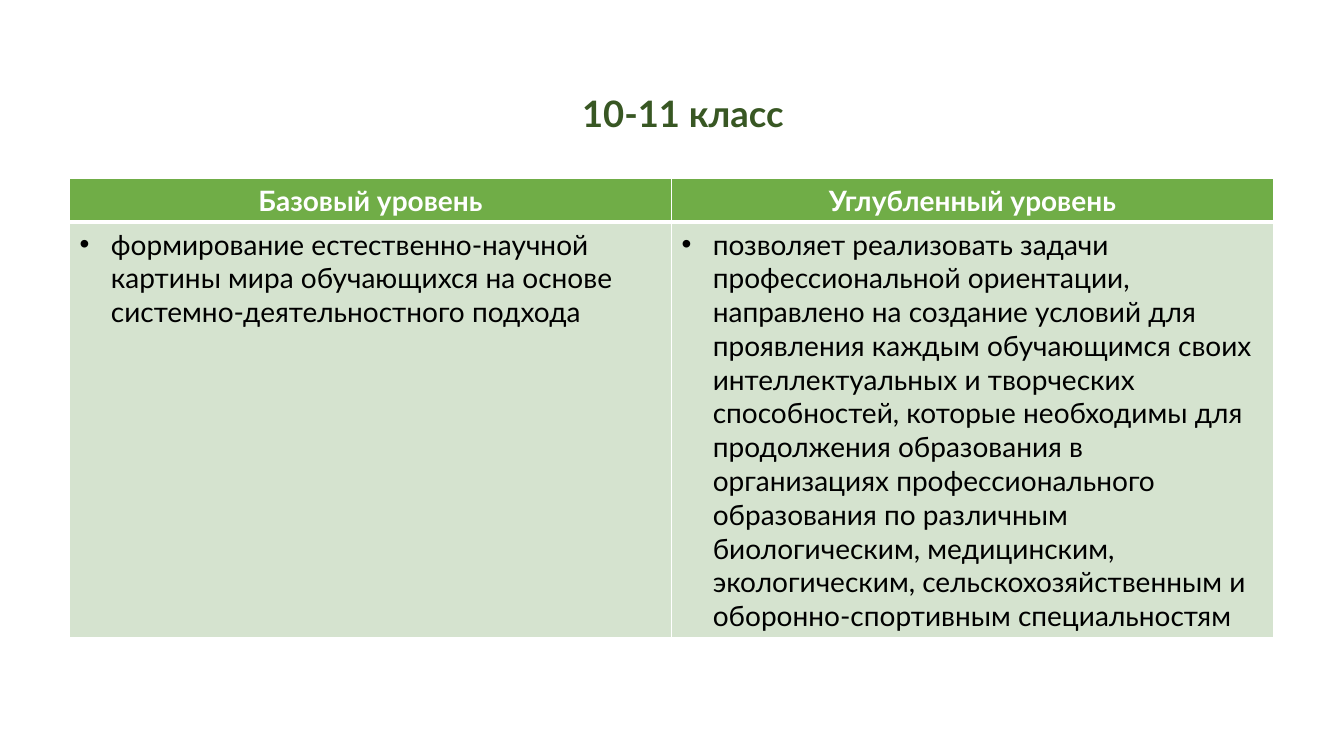
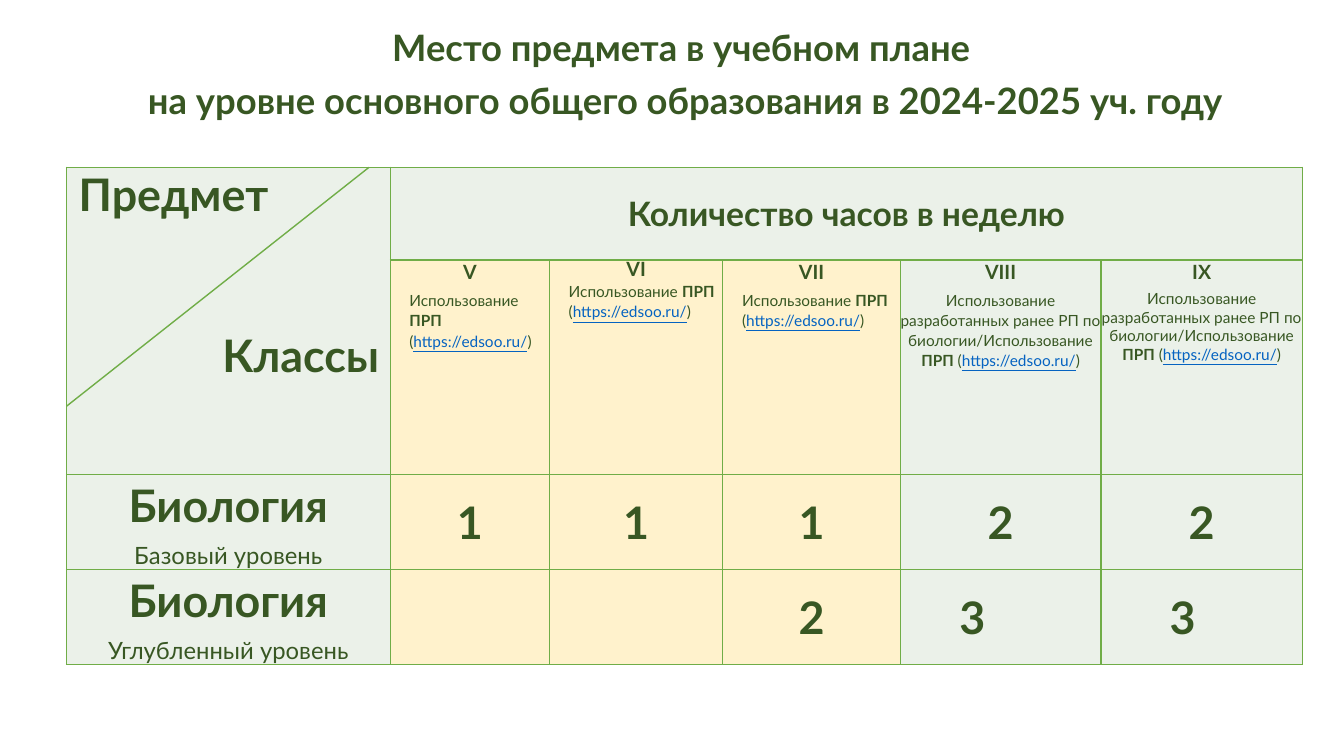
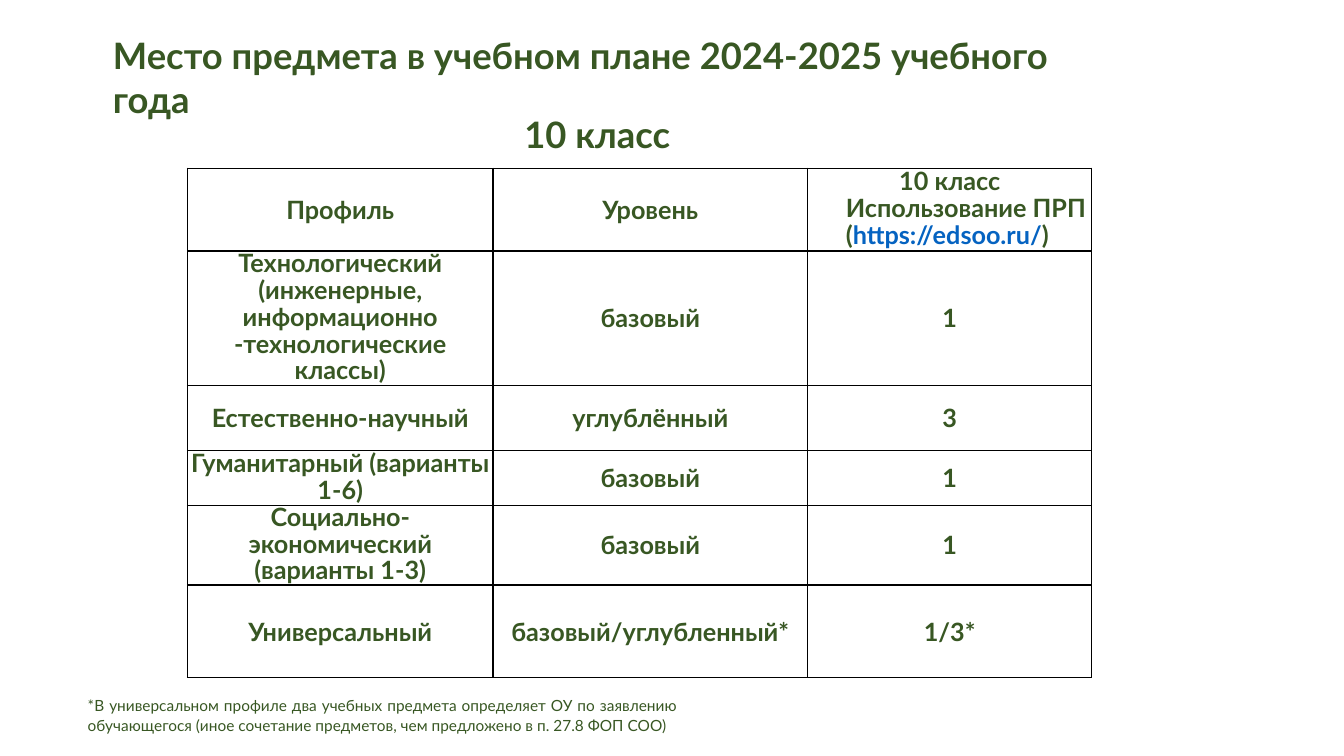
from dataclasses import dataclass, field
from typing import Any, Callable

from lxml import etree
from pptx import Presentation
from pptx.dml.color import RGBColor
from pptx.enum import shapes, text
from pptx.oxml.ns import qn
from pptx.util import Inches, Pt

FONT = "Lato"
DARK, GREEN, LINK = "385723", "70AD47", "0563C1"
PALE, MINT, CREAM = "EBF1E9", "D5E3CF", "FFF2CC"
WHITE, BLACK = "FFFFFF", "000000"
LEFT, CENTER, RIGHT, JUSTIFY = (
    text.PP_ALIGN.LEFT, text.PP_ALIGN.CENTER, text.PP_ALIGN.RIGHT, text.PP_ALIGN.JUSTIFY)
TOP, MIDDLE, BOTTOM = (
    text.MSO_ANCHOR.TOP, text.MSO_ANCHOR.MIDDLE, text.MSO_ANCHOR.BOTTOM)
SIDES = ("L", "R", "T", "B")
Box = tuple[float, float, float, float]


@dataclass
class Run:
    text: str
    size: float
    bold: bool = True
    color: str = DARK
    underline: bool = False


@dataclass
class Para:
    runs: list[Run]
    align: Any = CENTER
    fmt: dict[str, Any] = field(default_factory=dict)
    indent: float = 0
    bullet: bool = False


@dataclass
class Cell:
    paras: list[Para] = field(default_factory=list)
    anchor: Any = MIDDLE
    inset: float = 0
    right: float = 0


@dataclass
class Grid:
    box: Box
    cols: list[float]
    rows: list[float]
    cells: list[list[Cell]]
    fill: Callable[[int, int], str]
    border: str
    width: Callable[[int, str], float] = lambda row, side: 1


def rgb(color: str) -> RGBColor:
    return RGBColor.from_string(color)


def apply(obj: Any, fmt: dict[str, Any]) -> None:
    for name, value in fmt.items():
        setattr(obj, name, value)


def line(value: str, size: float, **fmt: Any) -> Para:
    return Para([Run(value, size)], fmt=fmt)


def write(tf: Any, paras: list[Para]) -> None:
    for i, para in enumerate(paras):
        p = tf.paragraphs[0] if i == 0 else tf.add_paragraph()
        apply(p, {"alignment": para.align, **para.fmt})
        pPr = p._p.get_or_add_pPr()
        pPr.set("marL", str(Inches(para.indent)))
        pPr.set("indent", str(-Inches(para.indent) if para.bullet else 0))
        if para.bullet:
            etree.SubElement(pPr, qn("a:buFont")).set("typeface", "Arial")
            etree.SubElement(pPr, qn("a:buChar")).set("char", "•")
        for run in para.runs:
            r = p.add_run()
            r.text = run.text
            apply(r.font, {"name": FONT, "size": Pt(run.size), "bold": run.bold,
                           "underline": run.underline})
            r.font.color.rgb = rgb(run.color)


def place_text(sp: Any, box: Box, paras: list[Para], wrap: bool = True) -> None:
    apply(sp, dict(zip(("left", "top", "width", "height"), map(Inches, box))))
    tf = sp.text_frame
    apply(tf, {"margin_left": 0, "margin_top": 0, "margin_right": 0, "margin_bottom": 0,
               "vertical_anchor": TOP, "word_wrap": wrap,
               "auto_size": text.MSO_AUTO_SIZE.NONE})
    write(tf, paras)


def titled_slide(prs: Any, box: Box, lines: list[str], align: Any = CENTER,
                 wrap: bool = True) -> Any:
    s = prs.slides.add_slide(prs.slide_layouts[5])
    paras = [Para([Run(value, 26)], align, {"space_after": Pt(6.3), "space_before": Pt(0)})
             for value in lines]
    place_text(s.shapes.title, box, paras, wrap)
    return s


def add_borders(cell: Any, color: str, widths: list[float]) -> None:
    tcPr = cell._tc.get_or_add_tcPr()
    for side, width in zip(SIDES, widths):
        ln = etree.SubElement(tcPr, qn(f"a:ln{side}"), w=str(Pt(width)))
        fill = etree.SubElement(ln, qn("a:solidFill"))
        etree.SubElement(fill, qn("a:srgbClr"), val=color)


def add_grid(s: Any, grid: Grid) -> Any:
    table = s.shapes.add_table(len(grid.rows), len(grid.cols), *map(Inches, grid.box)).table
    apply(table, {"first_row": False, "horz_banding": False})
    for col, width in zip(table.columns, grid.cols):
        col.width = Inches(width)
    for i, (row, height) in enumerate(zip(table.rows, grid.rows)):
        row.height = Inches(height)
        for j, cell in enumerate(row.cells):
            add_borders(cell, grid.border, [grid.width(i, side) for side in SIDES])
            cell.fill.solid()
            cell.fill.fore_color.rgb = rgb(grid.fill(i, j))
            content = grid.cells[i][j] if j < len(grid.cells[i]) else Cell()
            apply(cell, {"margin_left": Inches(content.inset),
                         "margin_right": Inches(content.inset + content.right),
                         "margin_top": Inches(content.inset / 2),
                         "margin_bottom": Inches(content.inset / 2),
                         "vertical_anchor": content.anchor})
            write(cell.text_frame, content.paras)
    return table


def link_runs(size: float, bold: bool) -> list[Run]:
    return [Run("(", size, bold), Run("https://edsoo.ru/", size, bold, LINK, True),
            Run(")", size, bold)]


def levels_slide(prs: Any) -> None:
    s = titled_slide(prs, (1.11, 0.9, 11.33, 0.6), ["10-11 класс"])
    heads = ["Базовый уровень", "Углубленный уровень"]
    bodies = [
        "формирование естественно-научной картины мира обучающихся на основе "
        "системно-деятельностного подхода",
        "позволяет реализовать задачи профессиональной ориентации, направлено на создание "
        "условий для проявления каждым обучающимся своих интеллектуальных и творческих "
        "способностей, которые необходимы для продолжения образования в организациях "
        "профессионального образования по различным биологическим, медицинским, "
        "экологическим, сельскохозяйственным и оборонно-спортивным специальностям"]
    cells = [
        [Cell([Para([Run(h, 20, True, WHITE)])], TOP, 0.1) for h in heads],
        [Cell([Para([Run(b, 20, False, BLACK)], LEFT, indent=0.31, bullet=True)], TOP, 0.1)
         for b in bodies]]
    add_grid(s, Grid(
        (0.69, 1.77, 11.95, 4.53), [5.97] * 2, [0.41, 4.12], cells,
        lambda i, j: MINT if i else GREEN, WHITE,
        lambda i, side: 3 if (i, side) in ((0, "B"), (1, "T")) else 1))


def class_cell(name: str, pitch: float, reused: bool) -> Cell:
    head = {"line_spacing": Pt(pitch)} if name == "VI" else {"space_after": Pt(4.2)}
    lead = ("Использование разработанных ранее РП по биологии/Использование "
            if reused else "Использование ")
    runs = [Run(lead, 11, False), Run("ПРП ", 11), *link_runs(11, False)]
    detail = Para(runs, CENTER if reused else LEFT, {"line_spacing": Pt(pitch)},
                  0 if reused else 0.19)
    return Cell([line(name, 14, **head), detail], TOP)


def subject_row(level: str, hours: list[str], shifts: list[float]) -> list[Cell]:
    subject = Cell([line("Биология", 32, space_after=Pt(6.3)),
                    Para([Run(level, 17, False)])], BOTTOM)
    return [subject] + [Cell([line(h, 32)] if h else [], right=shift)
                        for h, shift in zip(hours, shifts)]


def hours_slide(prs: Any) -> None:
    s = titled_slide(prs, (1.14, 0.25, 11.33, 1.17), [
        "Место предмета в учебном плане ",
        "на уровне основного общего образования в 2024-2025 уч. году"])
    corner = Cell([
        Para([Run("Предмет", 32)], LEFT, indent=0.12),
        Para([Run("Классы ", 32)], RIGHT, {"space_before": Pt(76)}, 0.21)], TOP)
    classes = [("V", 14.6, False), ("VI", 14.6, False), ("VII", 14.6, False),
               ("VIII", 14.4, True), ("IX", 13.2, True)]
    cells = [
        [corner, Cell([line("Количество часов в неделю", 24)])],
        [Cell()] + [class_cell(*c) for c in classes],
        subject_row("Базовый уровень", ["1", "1", "1", "2", "2"], [0] * 5),
        subject_row("Углубленный уровень", ["", "", "2", "3", "3"], [0, 0, 0, 0.56, 0.38])]
    table = add_grid(s, Grid(
        (0.66, 1.66, 12.26, 4.93), [3.21, 1.58, 1.72, 1.76, 1.99, 2],
        [0.92, 2.13, 0.94, 0.94], cells,
        lambda i, j: CREAM if i and 1 <= j <= 3 else PALE, GREEN))
    table.cell(0, 0).merge(table.cell(1, 0))
    table.cell(0, 1).merge(table.cell(0, 5))
    diagonal = s.shapes.add_connector(
        shapes.MSO_CONNECTOR.STRAIGHT, *map(Inches, (0.66, 4.03, 3.66, 1.66)))
    diagonal.line.color.rgb = rgb(GREEN)
    diagonal.line.width = Pt(1)
    etree.SubElement(diagonal._element.spPr, qn("a:effectLst"))


def profiles_slide(prs: Any) -> None:
    s = titled_slide(prs, (1.12, 0.33, 10.06, 0.43),
                     ["Место предмета в учебном плане 2024-2025 учебного года"], LEFT, False)
    place_text(s.shapes.add_textbox(0, 0, 0, 0), (5.2, 1.11, 1.46, 0.32),
               [Para([Run("10 класс", 26)], LEFT)], False)
    pitch = {"line_spacing": Pt(19.2)}
    usage = Para([Run("Использование ПРП ", 18), *link_runs(18, True)], LEFT, pitch, 0.38)
    profiles = [
        ("Технологический (инженерные, информационно -технологические классы)",
         19.2, "базовый", "1"),
        ("Естественно-научный", None, "углублённый", "3"),
        ("Гуманитарный (варианты 1-6)", 19.4, "базовый", "1"),
        ("Социально-экономический (варианты 1-3)", 19, "базовый", "1"),
        ("Универсальный", None, "базовый/углубленный*", "1/3*")]
    cells = [[Cell([line("Профиль", 18)]), Cell([line("Уровень", 18)]),
              Cell([line("10 класс", 18, **pitch), usage])]]
    for name, spacing, level, hours in profiles:
        fmt = {"line_spacing": Pt(spacing)} if spacing else {}
        cells.append([Cell([line(name, 18, **fmt)]), Cell([line(level, 18)]),
                      Cell([line(hours, 18)])])
    add_grid(s, Grid(
        (1.86, 1.67, 8.97, 5.05), [3.03, 3.12, 2.82],
        [0.82, 1.33, 0.65, 0.54, 0.79, 0.92], cells, lambda i, j: WHITE, BLACK))
    note = ("*В универсальном профиле два учебных предмета определяет ОУ по заявлению "
            "обучающегося (иное сочетание предметов, чем предложено в п. 27.8 ФОП СОО)")
    place_text(s.shapes.add_textbox(0, 0, 0, 0), (0.87, 6.89, 5.85, 0.39),
               [Para([Run(note, 11, False)], JUSTIFY, {"line_spacing": Pt(14.4)})])


def main() -> None:
    prs = Presentation()
    apply(prs, {"slide_width": Inches(13.33), "slide_height": Inches(7.5)})
    for build in (levels_slide, hours_slide, profiles_slide):
        build(prs)
    prs.save("out.pptx")


if __name__ == "__main__":
    main()
